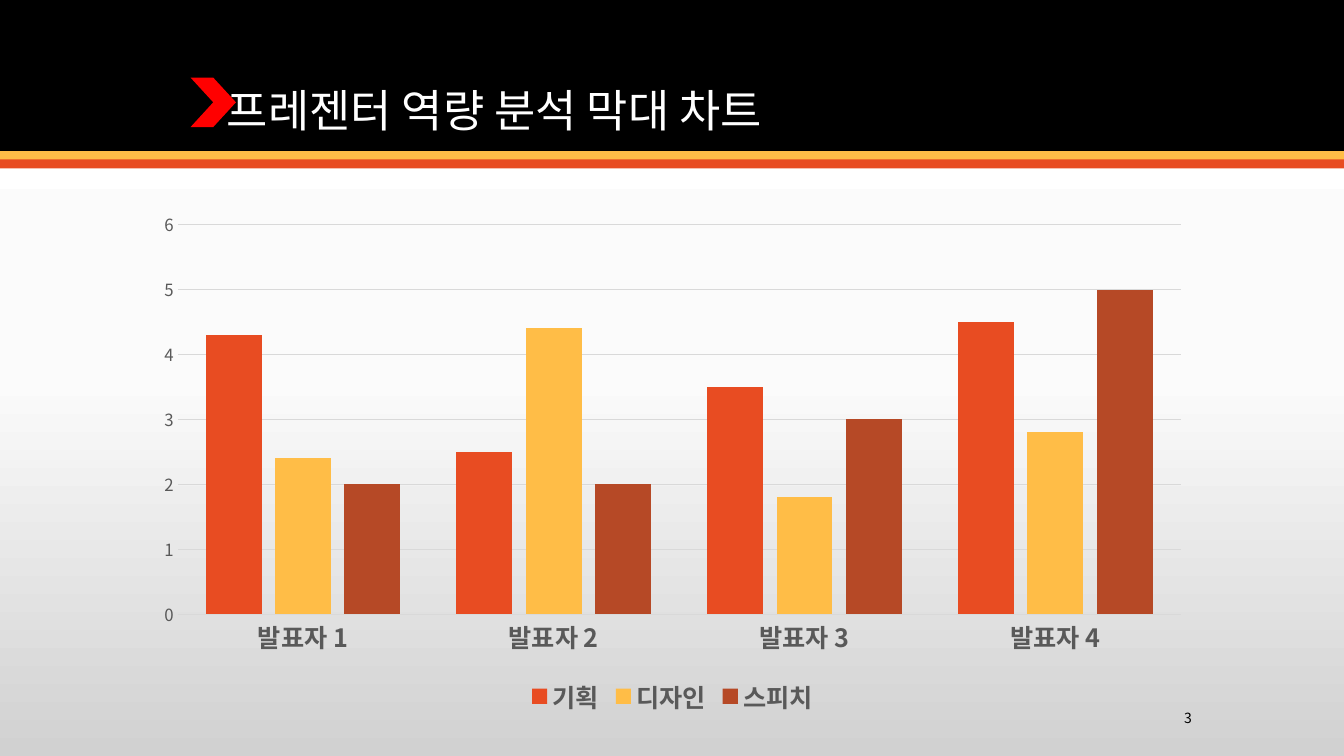
from copy import deepcopy
from typing import NamedTuple

from lxml import etree
from pptx import Presentation
from pptx.chart.data import CategoryChartData
from pptx.dml.color import RGBColor
from pptx.enum.chart import XL_CHART_TYPE, XL_LEGEND_POSITION, XL_TICK_MARK
from pptx.enum.shapes import MSO_SHAPE
from pptx.enum.text import MSO_ANCHOR, PP_ALIGN
from pptx.oxml.ns import qn
from pptx.util import Inches, Pt

RECT, CHEVRON = MSO_SHAPE.RECTANGLE, MSO_SHAPE.CHEVRON
COLUMNS = XL_CHART_TYPE.COLUMN_CLUSTERED
LEGEND_BOTTOM = XL_LEGEND_POSITION.BOTTOM
NO_TICK = XL_TICK_MARK.NONE
BOTTOM, MIDDLE = MSO_ANCHOR.BOTTOM, MSO_ANCHOR.MIDDLE
LEFT, RIGHT = PP_ALIGN.LEFT, PP_ALIGN.RIGHT

BLACK = RGBColor(0x00, 0x00, 0x00)
WHITE = RGBColor(0xFF, 0xFF, 0xFF)
PALE = RGBColor(0xFB, 0xFB, 0xFB)
SILVER = RGBColor(0xD1, 0xD1, 0xD1)
GRID = RGBColor(0xD9, 0xD9, 0xD9)
GRAY = RGBColor(0x59, 0x59, 0x59)
RED = RGBColor(0xFF, 0x00, 0x00)
ORANGE = RGBColor(0xE8, 0x4C, 0x22)
YELLOW = RGBColor(0xFF, 0xBD, 0x47)
BROWN = RGBColor(0xB6, 0x49, 0x26)

FONT = "Noto Sans CJK KR"
CHART_FONT = "Vollkorn"
SLIDE_W, SLIDE_H = 13.33, 7.5
MARGIN, CONTENT_W = 1.42, 10.5


class Block(NamedTuple):
    kind: MSO_SHAPE
    left: float
    top: float
    width: float
    height: float
    color: RGBColor


class Label(NamedTuple):
    text: str
    left: float
    top: float
    width: float
    height: float
    size: int
    color: RGBColor
    align: PP_ALIGN
    anchor: MSO_ANCHOR
    indent: float
    spacing: float


class Skill(NamedTuple):
    name: str
    scores: tuple[float, ...]
    color: RGBColor


BLOCKS = (
    Block(RECT, 0, 0, SLIDE_W, 1.5, BLACK),
    Block(RECT, 0, 1.5, SLIDE_W, 0.09, YELLOW),
    Block(RECT, 0, 1.58, SLIDE_W, 0.09, ORANGE),
    Block(CHEVRON, 1.89, 0.77, 0.45, 0.49, RED),
)
LABELS = (
    Label("프레젠터 역량 분석 막대 차트", MARGIN, 0.28, CONTENT_W, 1.13,
          32, WHITE, LEFT, BOTTOM, 0.83, 0.9),
    Label("3", 10.42, 6.97, 1.5, 0.3, 10, BLACK, RIGHT, MIDDLE, 0.1, 1),
)
PRESENTERS = [f"발표자 {n}" for n in range(1, 5)]
SKILLS = (
    Skill("기획", (4.3, 2.5, 3.5, 4.5), ORANGE),
    Skill("디자인", (2.4, 4.4, 1.8, 2.8), YELLOW),
    Skill("스피치", (2, 2, 3, 5), BROWN),
)
BACKDROP = ((0, WHITE), (0.5, PALE), (1, SILVER))


def style_font(font, size: int, color: RGBColor, bold: bool = False,
               name: str = FONT) -> None:
    font.name = name
    font.size = Pt(size)
    font.bold = bold
    font.color.rgb = color


def add_east_asian_fonts(element) -> None:
    for latin in list(element.iter(qn("a:latin"))):
        ea = etree.Element(qn("a:ea"), typeface=latin.get("typeface"))
        latin.addnext(ea)


def paint_background(s) -> None:
    fill = s.background.fill
    fill.gradient()
    fill.gradient_angle = 270
    stops = s.element.find(".//" + qn("a:gsLst"))
    stops.insert(1, deepcopy(stops[0]))
    for stop, (position, color) in zip(fill.gradient_stops, BACKDROP):
        stop.position = position
        stop.color.rgb = color


def add_block(s, block: Block) -> None:
    sp = s.shapes.add_shape(block.kind, Inches(block.left), Inches(block.top),
                            Inches(block.width), Inches(block.height))
    sp.shadow.inherit = False
    sp.fill.solid()
    sp.fill.fore_color.rgb = block.color
    sp.line.fill.background()


def add_label(s, label: Label) -> None:
    sp = s.shapes.add_textbox(Inches(label.left), Inches(label.top),
                              Inches(label.width), Inches(label.height))
    tf = sp.text_frame
    tf.word_wrap = True
    tf.vertical_anchor = label.anchor
    tf.margin_left = Inches(label.indent)
    p = tf.paragraphs[0]
    p.text = label.text
    p.alignment = label.align
    p.line_spacing = label.spacing
    style_font(p.font, label.size, label.color)
    add_east_asian_fonts(sp.element)


def add_skill_chart(s) -> None:
    data = CategoryChartData()
    data.categories = PRESENTERS
    for skill in SKILLS:
        data.add_series(skill.name, skill.scores)
    chart = s.shapes.add_chart(COLUMNS, Inches(MARGIN), Inches(2),
                               Inches(CONTENT_W), Inches(5.14), data).chart
    style_font(chart.font, 10, BLACK, name=CHART_FONT)
    chart.has_title = False
    chart.has_legend = True
    chart.legend.position = LEGEND_BOTTOM
    chart.legend.include_in_layout = False
    style_font(chart.legend.font, 18, GRAY, bold=True)

    plot = chart.plots[0]
    plot.gap_width = 100
    plot.overlap = -24
    plot.vary_by_categories = False
    for series, skill in zip(plot.series, SKILLS):
        series.format.fill.solid()
        series.format.fill.fore_color.rgb = skill.color

    cat_axis, val_axis = chart.category_axis, chart.value_axis
    for axis in (cat_axis, val_axis):
        axis.major_tick_mark = NO_TICK
        axis.minor_tick_mark = NO_TICK
    style_font(cat_axis.tick_labels.font, 18, GRAY, bold=True)
    style_font(val_axis.tick_labels.font, 12, GRAY)
    val_axis.minimum_scale, val_axis.maximum_scale = 0, 6
    val_axis.major_unit = 1
    val_axis.format.line.fill.background()
    for line in (cat_axis.format.line, val_axis.major_gridlines.format.line):
        line.color.rgb = GRID
        line.width = Pt(0.75)
    add_east_asian_fonts(chart.element)


def main() -> None:
    prs = Presentation()
    prs.slide_width, prs.slide_height = Inches(SLIDE_W), Inches(SLIDE_H)
    s = prs.slides.add_slide(prs.slide_layouts[6])
    paint_background(s)
    for block in BLOCKS:
        add_block(s, block)
    add_skill_chart(s)
    for label in LABELS:
        add_label(s, label)
    prs.save("out.pptx")


if __name__ == "__main__":
    main()
